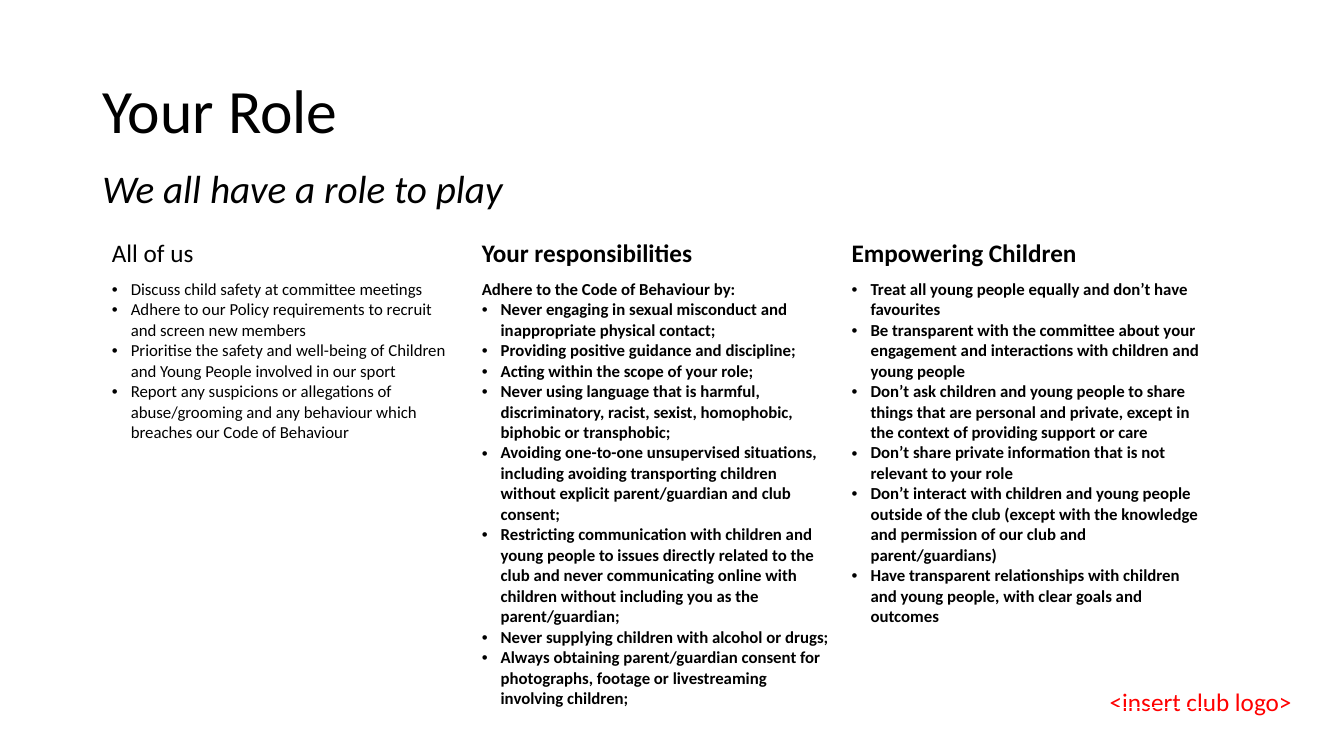
"""Build the "Your Role" slide with its three-column table of responsibilities."""
from lxml import etree
from pptx import Presentation
from pptx.dml.color import RGBColor
from pptx.enum.text import MSO_ANCHOR, MSO_AUTO_SIZE, PP_ALIGN
from pptx.oxml.ns import qn
from pptx.util import Pt

LEFT = PP_ALIGN.LEFT
MIDDLE, TOP = MSO_ANCHOR.MIDDLE, MSO_ANCHOR.TOP
NO_AUTOFIT = MSO_AUTO_SIZE.NONE
FONT = "Calibri"
COLORS = {"text": "000000", "logo": "FF0000"}
BULLET_INDENT = Pt(13.5)

COLUMNS = [
    {
        "heading": "All of us",
        "bold": False,
        "intro": None,
        "bullets": [
            "Discuss child safety at committee meetings",
            "Adhere to our Policy requirements to recruit and screen new members",
            "Prioritise the safety and well-being of Children and Young People involved in our sport",
            "Report any suspicions or allegations of abuse/grooming and any behaviour which "
            "breaches our Code of Behaviour",
        ],
    },
    {
        "heading": "Your responsibilities",
        "bold": True,
        "intro": "Adhere to the Code of Behaviour by:",
        "bullets": [
            "Never engaging in sexual misconduct and inappropriate physical contact;",
            "Providing positive guidance and discipline;",
            "Acting within the scope of your role;",
            "Never using language that is harmful, discriminatory, racist, sexist, homophobic, "
            "biphobic or transphobic;",
            "Avoiding one-to-one unsupervised situations, including avoiding transporting children "
            "without explicit parent/guardian and club consent;",
            "Restricting communication with children and young people to issues directly related "
            "to the club and never communicating online with children without including you as "
            "the parent/guardian;",
            "Never supplying children with alcohol or drugs;",
            "Always obtaining parent/guardian consent for photographs, footage or livestreaming "
            "involving children;",
        ],
    },
    {
        "heading": "Empowering Children",
        "bold": True,
        "intro": None,
        "bullets": [
            "Treat all young people equally and don’t have favourites",
            "Be transparent with the committee about your engagement and interactions with "
            "children and young people",
            "Don’t ask children and young people to share things that are personal and private, "
            "except in the context of providing support or care",
            "Don’t share private information that is not relevant to your role",
            "Don’t interact with children and young people outside of the club (except with the "
            "knowledge and permission of our club and parent/guardians)",
            "Have transparent relationships with children and young people, with clear goals "
            "and outcomes",
        ],
    },
]


def write(p, text, size, color="text", bold=False, italic=False):
    """Put left-aligned text in a paragraph and format its run."""
    p.text = text
    p.alignment = LEFT
    font = p.runs[0].font
    font.name, font.size = FONT, Pt(size)
    font.bold, font.italic = bold, italic
    font.color.rgb = RGBColor.from_string(COLORS[color])


def add_bullet(p):
    """Give a paragraph a hanging bullet."""
    pPr = p._p.get_or_add_pPr()
    pPr.set("marL", str(BULLET_INDENT))
    pPr.set("indent", str(-BULLET_INDENT))
    etree.SubElement(pPr, qn("a:buFont")).set("typeface", "Arial")
    etree.SubElement(pPr, qn("a:buChar")).set("char", "•")


prs = Presentation()
prs.slide_width, prs.slide_height = Pt(960), Pt(540)
s = prs.slides.add_slide(prs.slide_layouts[5])

title = s.shapes.title
title.left, title.top, title.width, title.height = Pt(66), Pt(28.75), Pt(828), Pt(104.4)
tf = title.text_frame
tf.auto_size = NO_AUTOFIT
tf.vertical_anchor = MIDDLE
write(tf.paragraphs[0], "Your Role", 44)
tf.paragraphs[0].line_spacing = 0.9

subtitle = s.shapes.add_textbox(Pt(66), Pt(117.4), Pt(828), Pt(71.3))
tf = subtitle.text_frame
tf.word_wrap = True
p = tf.paragraphs[0]
write(p, "We all have a role to play", 28, italic=True)
p.line_spacing = 0.9
p.space_before = Pt(10)

logo_note = s.shapes.add_textbox(Pt(785.5), Pt(486.7), Pt(217.4), Pt(29))
tf = logo_note.text_frame
tf.word_wrap = True
write(tf.paragraphs[0], "<insert club logo>", 18, color="logo")

frame = s.shapes.add_table(2, len(COLUMNS), Pt(72.7), Pt(167), Pt(792.7), Pt(337))
table = frame.table
table.first_row = table.horz_banding = False
table.rows[0].height, table.rows[1].height = Pt(27.4), Pt(309.6)
for i, column in enumerate(COLUMNS):
    head, body = table.cell(0, i), table.cell(1, i)
    for cell in (head, body):
        cell.fill.background()
        cell.vertical_anchor = TOP
    write(head.text_frame.paragraphs[0], column["heading"], 18, bold=column["bold"])

    intro = [column["intro"]] if column["intro"] else []
    lines = intro + column["bullets"]
    tf = body.text_frame
    for j, line in enumerate(lines):
        p = tf.paragraphs[0] if j == 0 else tf.add_paragraph()
        write(p, line, 12, bold=column["bold"])
        if j >= len(intro):
            add_bullet(p)

prs.save("out.pptx")
